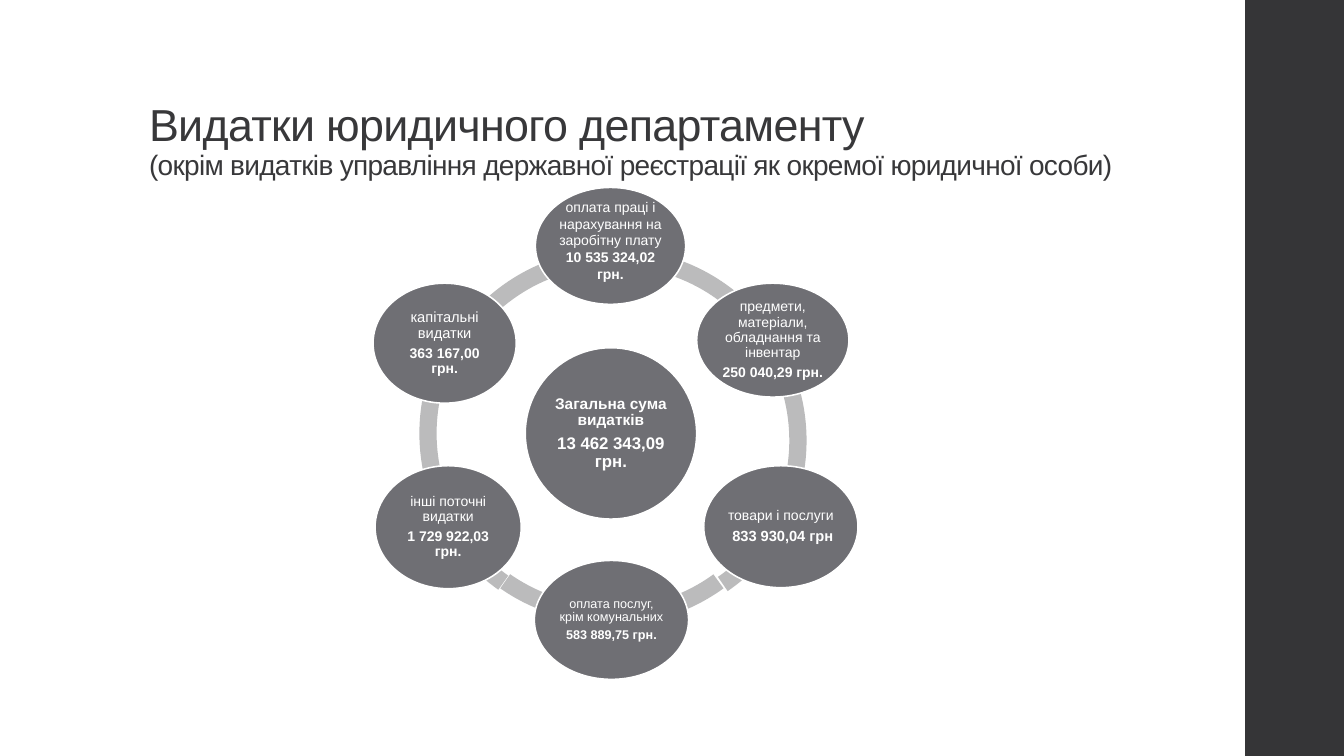
from dataclasses import dataclass

from lxml.etree import SubElement
from pptx import Presentation
from pptx.dml.color import RGBColor
from pptx.enum.shapes import MSO_SHAPE
from pptx.enum.text import MSO_ANCHOR, PP_ALIGN
from pptx.oxml.ns import qn
from pptx.util import Inches, Pt


@dataclass(frozen=True)
class Theme:
    font: str = "Arial"
    ink: str = "38383A"
    bar: str = "353537"
    ring: str = "BBBBBC"
    circle: str = "6F6F74"
    white: str = "FFFFFF"
    title: float = 32
    subtitle: float = 20
    total: float = 12
    label: float = 11
    large: float = 10.5
    body: float = 10
    small: float = 9
    outline: float = 1.1
    tracking: str = "-50"


T = Theme()
RING_SIZE = 3.8
RING_THICKNESS = 0.045

ARCS = [
    (4.14, 2.4, 125.28, 162.36),
    (4.15, 2.38, 89.63, 124.92),
    (4.16, 2.4, 54, 90),
    (4.24, 2.4, 17.86, 55.44),
    (4.2, 2.47, 196.52, 16.45),
    (4.16, 2.4, 162, 198),
]

EXPENSES = [
    ((6.91, 2.81, 1.51, 1.13), "предмети, матеріали, обладнання та інвентар", T.body,
     "250 040,29 грн.", T.body),
    ((6.98, 4.62, 1.53, 1.21), "товари і послуги", T.body, " 833 930,04 грн", T.large),
    ((5.3, 5.56, 1.53, 1.18), "оплата послуг, крім комунальних", T.small,
     "583 889,75 грн.", T.small),
    ((3.72, 4.62, 1.45, 1.22), "інші поточні видатки", T.body, "1 729 922,03 грн.", T.body),
    ((3.7, 2.81, 1.42, 1.19), "капітальні видатки", T.large, "363 167,00 грн.", T.body),
]


def add_text(tf, text, size, color=T.white, bold=False, align=PP_ALIGN.CENTER,
             spacing=0.9, after=0.35, tracking=None):
    p = tf.paragraphs[0]
    if p.runs:
        p = tf.add_paragraph()
    p.alignment = align
    p.line_spacing = spacing
    p.space_after = Pt(size * after)
    r = p.add_run()
    r.text = text
    r.font.name = T.font
    r.font.size = Pt(size)
    r.font.bold = bold
    r.font.color.rgb = RGBColor.from_string(color)
    if tracking:
        r.font._element.set("spc", tracking)


def add_block(s, kind, box, fill, line=None):
    sp = s.shapes.add_shape(kind, *map(Inches, box))
    sp.shadow.inherit = False
    sp.fill.solid()
    sp.fill.fore_color.rgb = RGBColor.from_string(fill)
    if line:
        sp.line.color.rgb = RGBColor.from_string(line)
        sp.line.width = Pt(T.outline)
    else:
        sp.line.fill.background()
    return sp


def add_arc(s, left, top, start, end):
    sp = add_block(s, MSO_SHAPE.BLOCK_ARC, (left, top, RING_SIZE, RING_SIZE), T.ring)
    geometry = sp._element.spPr.find(qn("a:prstGeom"))
    guides = geometry.find(qn("a:avLst"))
    guides.clear()
    values = (start * 60000, end * 60000, RING_THICKNESS * 100000)
    for i, value in enumerate(values, 1):
        SubElement(guides, qn("a:gd"), name=f"adj{i}", fmla=f"val {round(value)}")


def add_circle(s, box, label, label_size, amount, amount_size,
               label_bold=False, bottom=0.01, **fmt):
    sp = add_block(s, MSO_SHAPE.OVAL, box, T.circle, T.white)
    tf = sp.text_frame
    tf.word_wrap = True
    tf.vertical_anchor = MSO_ANCHOR.MIDDLE
    tf.margin_left = tf.margin_right = tf.margin_top = Inches(0.01)
    tf.margin_bottom = Inches(bottom)
    add_text(tf, label, label_size, bold=label_bold, **fmt)
    add_text(tf, amount, amount_size, bold=True, **fmt)


def add_title(s, title, subtitle):
    sp = s.shapes.add_textbox(Inches(1.38), Inches(0.76), Inches(10.6), Inches(1.09))
    tf = sp.text_frame
    tf.word_wrap = True
    tf.vertical_anchor = MSO_ANCHOR.BOTTOM
    for text, size in ((title, T.title), (subtitle, T.subtitle)):
        add_text(tf, text, size, color=T.ink, align=PP_ALIGN.LEFT, after=0,
                 tracking=T.tracking)


def main():
    prs = Presentation()
    prs.slide_width = Inches(13.33)
    prs.slide_height = Inches(7.5)
    s = prs.slides.add_slide(prs.slide_layouts[6])
    add_block(s, MSO_SHAPE.RECTANGLE, (12.35, 0, 0.98, 7.5), T.bar)
    add_title(s, "Видатки юридичного департаменту",
              "(окрім видатків управління державної реєстрації як окремої юридичної особи)")
    for arc in ARCS:
        add_arc(s, *arc)
    add_circle(s, (5.21, 3.45, 1.7, 1.7), "Загальна сума видатків", T.label,
               "13 462 343,09 грн.", T.total, label_bold=True)
    add_circle(s, (5.31, 1.86, 1.49, 1.16), "оплата праці і нарахування на заробітну плату",
               T.body, "10 535 324,02 грн.", T.body, bottom=0.12, spacing=1, after=0)
    for expense in EXPENSES:
        add_circle(s, *expense)
    prs.save("out.pptx")


if __name__ == "__main__":
    main()
